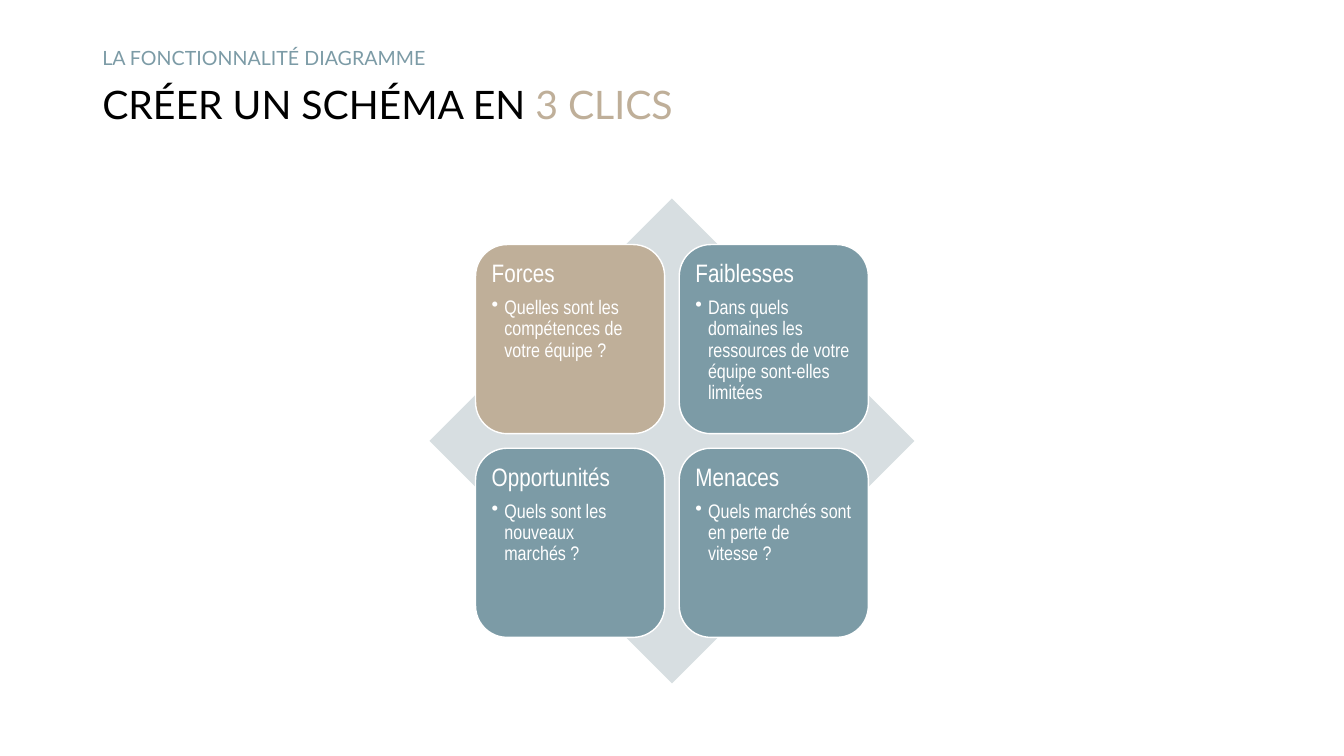
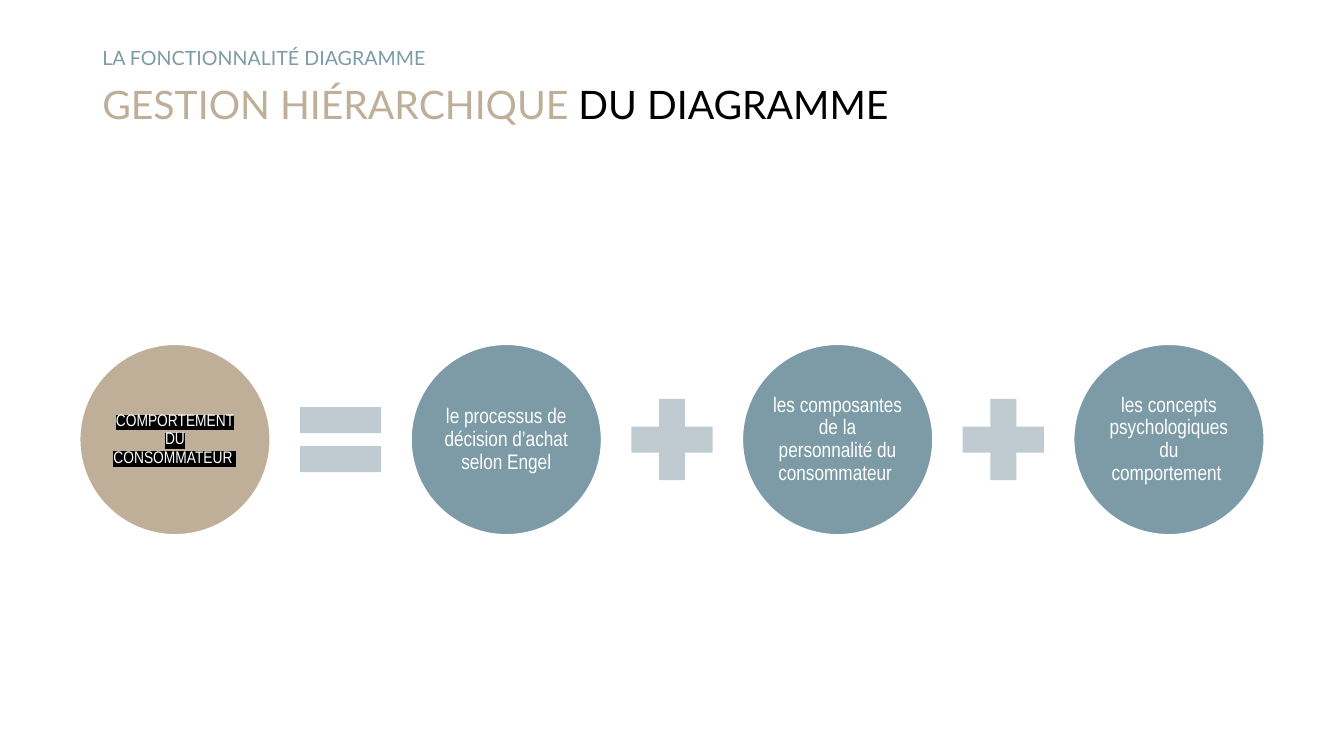
import pptx
import pptx.dml.color
import pptx.enum.shapes
import pptx.enum.text
import pptx.util
from lxml import etree
from pptx.oxml.ns import qn

Pt = pptx.util.Pt
SHAPE = pptx.enum.shapes.MSO_SHAPE
ANCHOR = pptx.enum.text.MSO_ANCHOR
ALIGN = pptx.enum.text.PP_ALIGN

COLORS = {
    "black": "000000",
    "white": "FFFFFF",
    "sand": "BFAF99",
    "blue": "7C9BA6",
    "mist": "D7DEE1",
    "operator": "BFCBD0",
}
TITLE_FONT = "Lato"
BODY_FONT = "Arial Narrow"
SECTION = "LA FONCTIONNALITÉ DIAGRAMME"


def rgb(name):
    return pptx.dml.color.RGBColor.from_string(COLORS[name])


def style_run(r, font, size, color):
    r.font.name = font
    r.font.size = Pt(size)
    r.font.color.rgb = rgb(color)


def add_heading_line(s, top, height, size, parts):
    """Place one line of the heading; parts are (text, colour) pairs."""
    box = s.shapes.add_textbox(Pt(66), Pt(top), Pt(828), Pt(height))
    tf = box.text_frame
    tf.word_wrap = True
    tf.vertical_anchor = ANCHOR.MIDDLE
    p = tf.paragraphs[0]
    p.line_spacing = 0.9
    for text, color in parts:
        r = p.add_run()
        r.text = text
        style_run(r, TITLE_FONT, size, color)


def add_slide(prs, title_parts):
    s = prs.slides.add_slide(prs.slide_layouts[6])
    add_heading_line(s, 56, 41, 28, title_parts)
    add_heading_line(s, 29, 26, 14, [(SECTION, "blue")])
    return s


def add_figure(s, kind, x, y, size, fill, outlined=False):
    sp = s.shapes.add_shape(kind, Pt(x), Pt(y), Pt(size), Pt(size))
    sp.shadow.inherit = False
    sp.fill.solid()
    sp.fill.fore_color.rgb = rgb(fill)
    if outlined:
        sp.line.color.rgb = rgb("white")
        sp.line.width = Pt(1)
    else:
        sp.line.fill.background()
    return sp


def fill_text(sp, paragraphs, inset, anchor, align):
    """Write (text, size) pairs into a shape, one paragraph each."""
    tf = sp.text_frame
    tf.word_wrap = True
    tf.vertical_anchor = anchor
    tf.margin_left = tf.margin_right = Pt(inset)
    tf.margin_top = tf.margin_bottom = Pt(inset)
    tf.text = "\n".join(text for text, _ in paragraphs)
    for p, (_, size) in zip(tf.paragraphs, paragraphs):
        p.alignment = align
        p.line_spacing = 0.9
        style_run(p.runs[0], BODY_FONT, size, "white")
    return tf.paragraphs


def add_bullet(p, indent):
    pPr = p._p.get_or_add_pPr()
    pPr.set("marL", str(Pt(indent)))
    pPr.set("indent", str(-Pt(indent)))
    etree.SubElement(pPr, qn("a:buChar")).set("char", "•")


def highlight(r, color):
    mark = etree.Element(qn("a:highlight"))
    etree.SubElement(mark, qn("a:srgbClr")).set("val", COLORS[color])
    r._r.rPr.find(qn("a:solidFill")).addnext(mark)


def add_swot_matrix(s, x, y, size, quadrants):
    """Draw a diamond in a square box with a 2 x 2 grid of tiles over it."""
    add_figure(s, SHAPE.DIAMOND, x, y, size, "mist")
    margin, tile, pitch = 0.095 * size, 0.39 * size, 0.42 * size
    for i, (heading, question, fill) in enumerate(quadrants):
        row, col = divmod(i, 2)
        sp = add_figure(s, SHAPE.ROUNDED_RECTANGLE, x + margin + col * pitch,
                        y + margin + row * pitch, tile, fill, outlined=True)
        head, body = fill_text(sp, [(heading, 18), (question, 14)],
                               5, ANCHOR.TOP, ALIGN.LEFT)
        head.space_after = Pt(7)
        add_bullet(body, 9)


def add_equation(s, x, center_y, width, terms, operators):
    """Draw circles in a row, joined by operator signs, across the width."""
    n = len(terms)
    sign_ratio, gap_ratio = 0.58, 0.08
    diameter = width / (n + (n - 1) * (sign_ratio + 2 * gap_ratio))
    sign, gap = sign_ratio * diameter, gap_ratio * diameter
    pitch = diameter + sign + 2 * gap
    circles = []
    for i, (text, size, fill) in enumerate(terms):
        sp = add_figure(s, SHAPE.OVAL, x + i * pitch, center_y - diameter / 2,
                        diameter, fill, outlined=True)
        fill_text(sp, [(text, size)], 1.5, ANCHOR.MIDDLE, ALIGN.CENTER)
        circles.append(sp)
    for i, kind in enumerate(operators):
        add_figure(s, kind, x + i * pitch + diameter + gap,
                   center_y - sign / 2, sign, "operator")
    return circles


def build_swot_slide(prs):
    s = add_slide(prs, [("CRÉER UN SCHÉMA EN ", "black"), ("3 CLICS", "sand")])
    add_swot_matrix(s, 306.8, 141.8, 346.4, [
        ("Forces", "Quelles sont les compétences de votre équipe ?", "sand"),
        ("Faiblesses", "Dans quels domaines les ressources de votre équipe "
                       "sont-elles limitées", "blue"),
        ("Opportunités", "Quels sont les nouveaux marchés ?", "blue"),
        ("Menaces", "Quels marchés sont en perte de vitesse ?", "blue"),
    ])


def build_equation_slide(prs):
    s = add_slide(prs, [("GESTION HIÉRARCHIQUE ", "sand"),
                        ("DU DIAGRAMME", "black")])
    circles = add_equation(s, 57, 314, 846, [
        ("COMPORTEMENT DU CONSOMMATEUR ", 12, "sand"),
        ("le processus de décision d’achat selon Engel", 15, "blue"),
        ("les composantes de la personnalité du consommateur ", 15, "blue"),
        ("les concepts psychologiques du comportement ", 15, "blue"),
    ], [SHAPE.MATH_EQUAL, SHAPE.MATH_PLUS, SHAPE.MATH_PLUS])
    highlight(circles[0].text_frame.paragraphs[0].runs[0], "black")


def main():
    prs = pptx.Presentation()
    prs.slide_width, prs.slide_height = Pt(960), Pt(540)
    build_swot_slide(prs)
    build_equation_slide(prs)
    prs.save("out.pptx")


if __name__ == "__main__":
    main()
